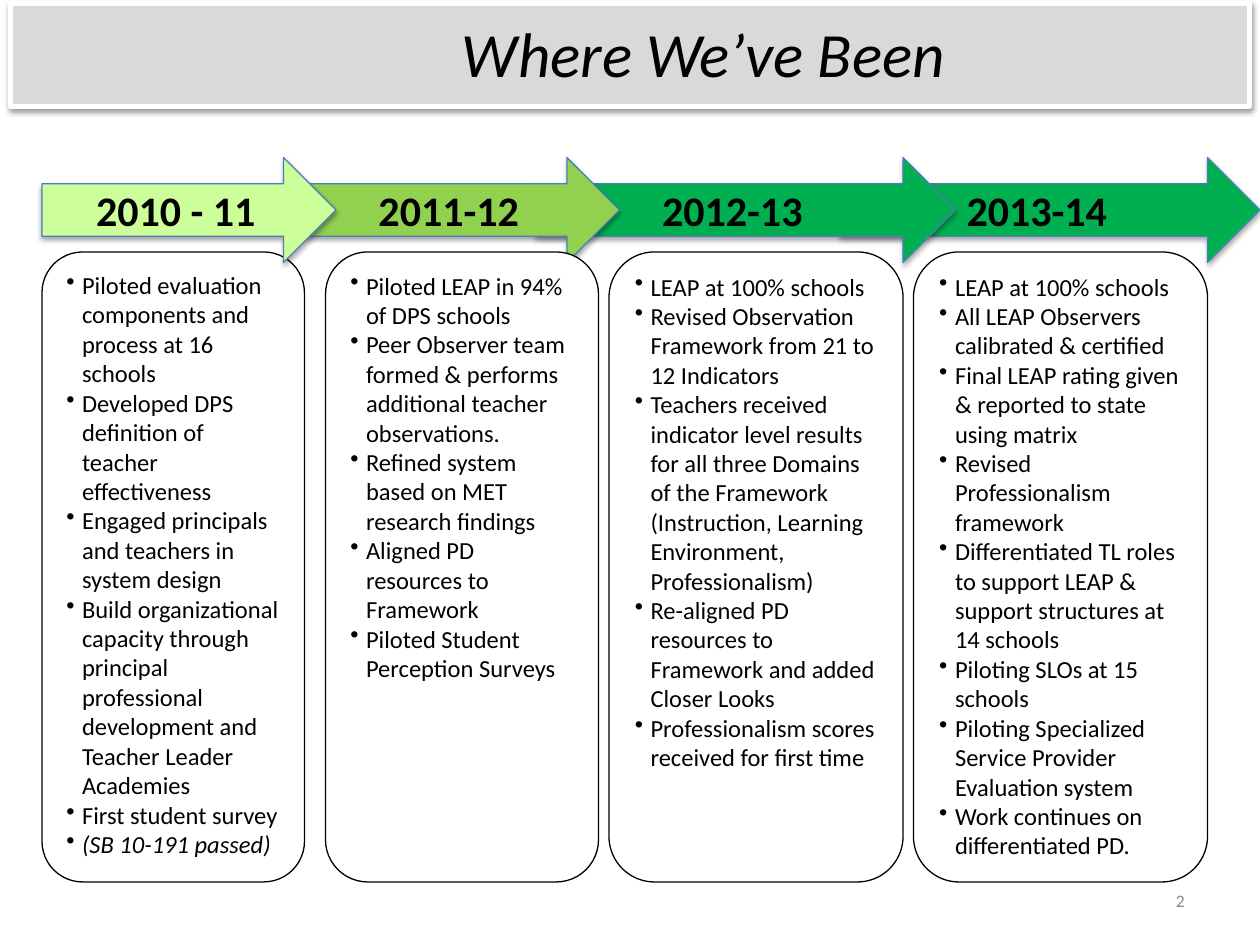
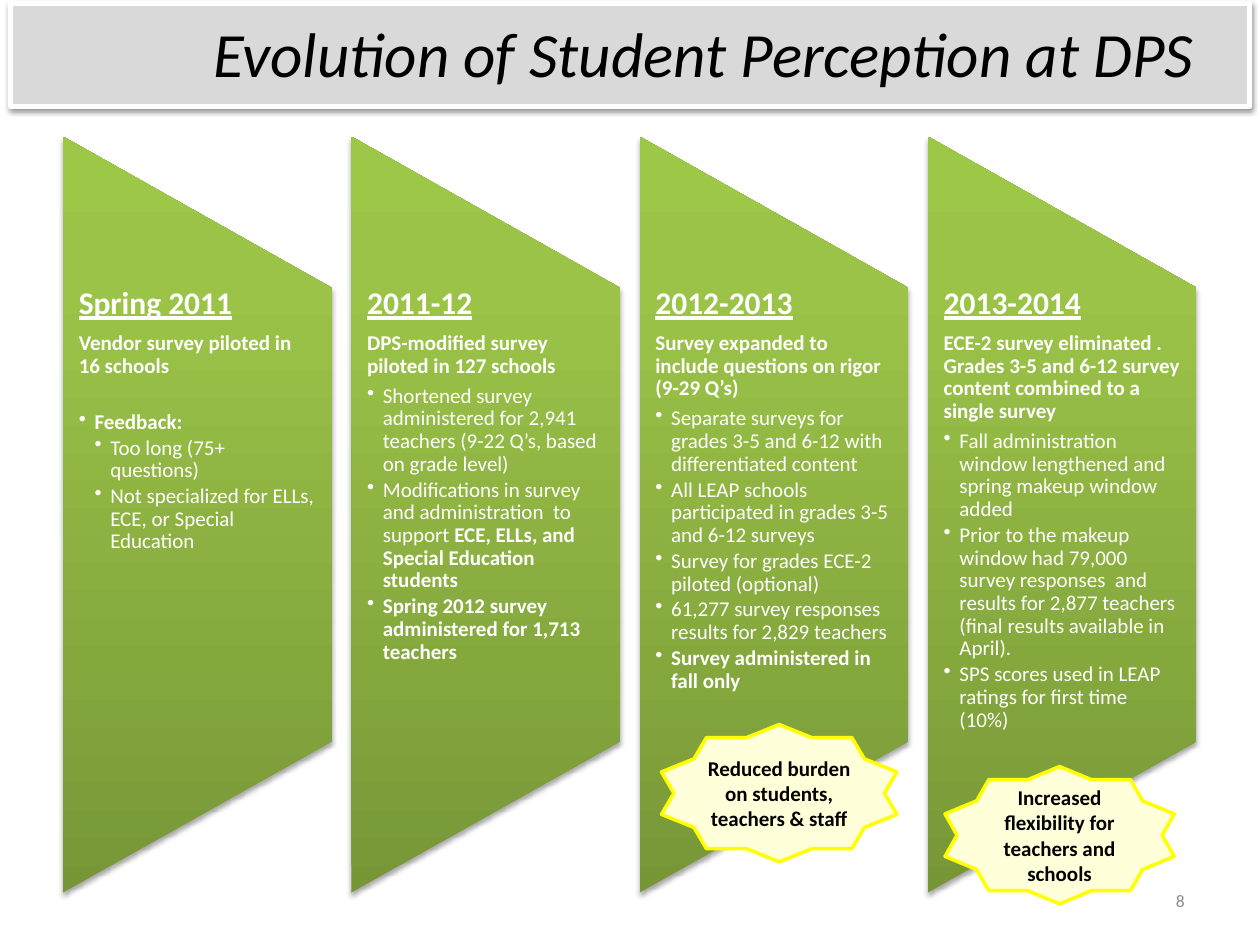
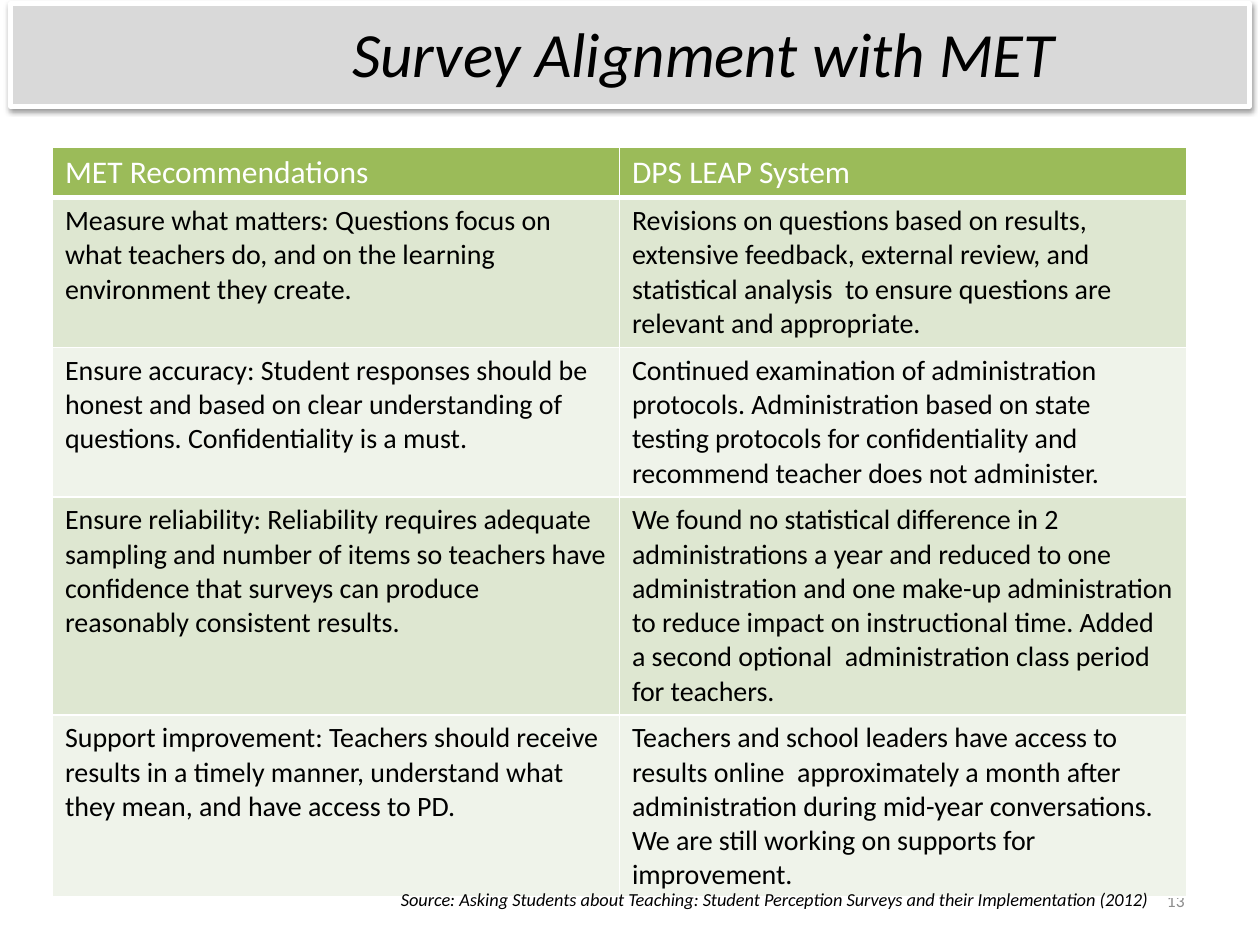
from dataclasses import dataclass

import lxml.etree
import pptx
import pptx.dml.color
import pptx.enum.shapes
import pptx.enum.text
import pptx.oxml.ns
import pptx.util

Pt = pptx.util.Pt
qn = pptx.oxml.ns.qn
SHAPE = pptx.enum.shapes.MSO_SHAPE
ALIGN = pptx.enum.text.PP_ALIGN
ANCHOR = pptx.enum.text.MSO_ANCHOR

FONT = "Calibri"
COLORS = {
    "black": "000000", "white": "FFFFFF", "band": "D9D9D9", "number": "8C8C8C",
    "arrow line": "4B7EBC", "pale green": "CCFF99", "light green": "92D050",
    "green": "00B050", "column dark": "779737", "column mid": "9BC348",
    "column light": "9DC746", "star": "FFFFD9", "star line": "FFFF00",
    "header": "9BBB59", "odd row": "DEE7D1", "even row": "EFF3EA",
}
INDENT = 9


@dataclass(frozen=True)
class Box:
    left: float
    top: float
    width: float
    height: float

    def lengths(self) -> tuple:
        return Pt(self.left), Pt(self.top), Pt(self.width), Pt(self.height)


@dataclass(frozen=True)
class Style:
    size: float
    color: str = "black"
    bold: bool = False
    italic: bool = False
    underline: bool = False


@dataclass(frozen=True)
class Year:
    """A timeline step: an arrow above a box of bullets."""
    label: str
    color: str
    arrow_left: float
    arrow_width: float
    box_left: float
    box_width: float
    bullets: tuple


@dataclass(frozen=True)
class Bullet:
    text: str
    bold: bool = False
    level: int = 1
    bold_ending: str = ""


@dataclass(frozen=True)
class SurveyColumn:
    heading: str
    summary: str
    bullets: tuple
    summary_gap: float = 4.2


@dataclass(frozen=True)
class Star:
    text: str
    box: Box


BAND = Box(6, 2.25, 708, 58.5)
TITLE = Box(84, 0, 636, 60)
NUMBER = Box(516, 500, 168, 29)

YEARS = (
    Year("2010 - 11", "pale green", 24, 168, 24, 150, (
        "Piloted evaluation components and process at 16 schools",
        "Developed DPS definition of teacher effectiveness",
        "Engaged principals and teachers in system design",
        "Build organizational capacity through principal professional "
        "development and Teacher Leader Academies",
        "First student survey",
        "(SB 10-191 passed)")),
    Year("2011-12", "light green", 174, 180, 186, 156, (
        "Piloted LEAP in 94% of DPS schools",
        "Peer Observer team formed & performs additional teacher observations.",
        "Refined system based on MET research findings",
        "Aligned PD resources to Framework",
        "Piloted Student Perception Surveys")),
    Year("2012-13", "green", 306, 240, 348, 168, (
        "LEAP at 100% schools",
        "Revised Observation Framework from 21 to 12 Indicators",
        "Teachers received indicator level results for all three Domains of the "
        "Framework (Instruction, Learning Environment, Professionalism)",
        "Re-aligned PD resources to Framework and added Closer Looks",
        "Professionalism scores received for first time")),
    Year("2013-14", "green", 480, 240, 522, 168, (
        "LEAP at 100% schools",
        "All LEAP Observers calibrated & certified",
        "Final LEAP rating given & reported to state using matrix",
        "Revised Professionalism framework",
        "Differentiated TL roles to support LEAP & support structures at 14 schools",
        "Piloting SLOs at 15 schools",
        "Piloting Specialized Service Provider Evaluation system",
        "Work continues on differentiated PD.")),
)

SURVEY_COLUMNS = (
    SurveyColumn("Spring 2011", "Vendor survey piloted in 16 schools", (
        Bullet("Feedback:", bold=True),
        Bullet("Too long (75+ questions)", level=2),
        Bullet("Not specialized for ELLs, ECE, or Special Education", level=2)),
        summary_gap=19),
    SurveyColumn("2011-12", "DPS-modified survey piloted in 127 schools", (
        Bullet("Shortened survey administered for 2,941 teachers "
               "(9-22 Q’s, based on grade level)"),
        Bullet("Modifications in survey and administration  to support ",
               bold_ending="ECE, ELLs, and Special Education students"),
        Bullet("Spring 2012 survey administered for 1,713 teachers", bold=True))),
    SurveyColumn("2012-2013", "Survey expanded to include questions on rigor (9-29 Q’s)", (
        Bullet("Separate surveys for grades 3-5 and 6-12 with differentiated content"),
        Bullet("All LEAP schools participated in grades 3-5 and 6-12 surveys"),
        Bullet("Survey for grades ECE-2 piloted (optional)"),
        Bullet("61,277 survey responses results for 2,829 teachers"),
        Bullet("Survey administered in fall only", bold=True))),
    SurveyColumn("2013-2014", "ECE-2 survey eliminated . Grades 3-5 and 6-12 survey "
                 "content combined to a single survey", (
        Bullet("Fall administration window lengthened and spring makeup window added"),
        Bullet("Prior to the makeup window had 79,000 survey responses  and results "
               "for 2,877 teachers (final results available in April)."),
        Bullet("SPS scores used in LEAP ratings for first time (10%)"))),
)

STARS = (
    Star("Reduced burden on students, teachers & staff", Box(378, 414, 134.5, 78.5)),
    Star("Increased flexibility for teachers and schools", Box(540, 438, 131, 78.5)),
)

ALIGNMENT_ROWS = (
    ("MET Recommendations", "DPS LEAP System"),
    ("Measure what matters: Questions focus on what teachers do, and on the "
     "learning environment they create.",
     "Revisions on questions based on results, extensive feedback, external review, "
     "and statistical analysis  to ensure questions are relevant and appropriate."),
    ("Ensure accuracy: Student responses should be honest and based on clear "
     "understanding of questions. Confidentiality is a must.",
     "Continued examination of administration protocols. Administration based on "
     "state testing protocols for confidentiality and recommend teacher does not "
     "administer."),
    ("Ensure reliability: Reliability requires adequate sampling and number of items "
     "so teachers have confidence that surveys can produce reasonably consistent "
     "results.",
     "We found no statistical difference in 2 administrations a year and reduced to "
     "one administration and one make-up administration to reduce impact on "
     "instructional time. Added a second optional  administration class period for "
     "teachers."),
    ("Support improvement: Teachers should receive results in a timely manner, "
     "understand what they mean, and have access to PD.",
     "Teachers and school leaders have access to results online  approximately a "
     "month after administration during mid-year conversations. We are still working "
     "on supports for improvement."),
)
ROW_HEIGHTS = (29, 85.5, 85.5, 124.5, 104)


def rgb(name: str) -> pptx.dml.color.RGBColor:
    return pptx.dml.color.RGBColor.from_string(COLORS[name])


def format_runs(paragraph, style: Style) -> None:
    for run in paragraph.runs:
        font = run.font
        font.name = FONT
        font.size = Pt(style.size)
        font.color.rgb = rgb(style.color)
        font.bold = style.bold
        font.italic = style.italic
        font.underline = style.underline


def add_bullet(paragraph, level: int = 1) -> None:
    properties = paragraph._p.get_or_add_pPr()
    properties.set("marL", str(Pt(INDENT * level)))
    properties.set("indent", str(-Pt(INDENT)))
    lxml.etree.SubElement(properties, qn("a:buChar"), char="•")


def write_text(shape, text: str, style: Style, align=ALIGN.LEFT, anchor=ANCHOR.MIDDLE) -> None:
    """Fill a shape with one paragraph per line of text, all in one style."""
    frame = shape.text_frame
    frame.word_wrap = True
    frame.vertical_anchor = anchor
    frame.text = text
    for paragraph in frame.paragraphs:
        paragraph.alignment = align
        format_runs(paragraph, style)


def add_text(slide, box: Box, text: str, style: Style, align=ALIGN.LEFT,
             anchor=ANCHOR.MIDDLE) -> None:
    write_text(slide.shapes.add_textbox(*box.lengths()), text, style, align, anchor)


def add_shape(slide, kind, box: Box, fill: str = "", line: str = "", line_width: float = 0.75):
    """Add a preset shape without shadow; an empty colour name leaves that part off."""
    shape = slide.shapes.add_shape(kind, *box.lengths())
    shape.shadow.inherit = False
    if fill:
        shape.fill.solid()
        shape.fill.fore_color.rgb = rgb(fill)
    if line:
        shape.line.color.rgb = rgb(line)
        shape.line.width = Pt(line_width)
    else:
        shape.line.fill.background()
    return shape


def add_color_element(parent, name: str):
    return lxml.etree.SubElement(parent, qn("a:srgbClr"), val=COLORS[name])


def add_shadow(shape, opacity: int, distance: float) -> None:
    effects = shape._element.spPr.find(qn("a:effectLst"))
    shadow = lxml.etree.SubElement(
        effects, qn("a:outerShdw"), blurRad=str(Pt(3.1)), dist=str(Pt(distance)),
        dir="5400000", rotWithShape="0")
    color = add_color_element(shadow, "black")
    lxml.etree.SubElement(color, qn("a:alpha"), val=str(opacity * 1000))


def fill_column_gradient(shape) -> None:
    """Dark at the bottom, light at the top, whatever the shape's rotation."""
    shape.fill.gradient()
    shape.fill.gradient_angle = 90
    gradient = shape._element.spPr.find(qn("a:gradFill"))
    gradient.set("rotWithShape", "0")
    stops = gradient.find(qn("a:gsLst"))
    for stop in list(stops):
        stops.remove(stop)
    for position, name in ((0, "column dark"), (80, "column mid"), (100, "column light")):
        stop = lxml.etree.SubElement(stops, qn("a:gs"), pos=str(position * 1000))
        add_color_element(stop, name)


def add_base_slide(presentation, title: str, number: int):
    slide = presentation.slides.add_slide(presentation.slide_layouts[6])
    band = add_shape(slide, SHAPE.RECTANGLE, BAND, "band", "white", 3)
    add_shadow(band, 38, 1.6)
    add_text(slide, TITLE, title, Style(36, italic=True), ALIGN.CENTER)
    add_text(slide, NUMBER, str(number), Style(10, "number"), ALIGN.RIGHT)
    return slide


def add_year_arrow(slide, year: Year) -> None:
    box = Box(year.arrow_left, 90, year.arrow_width, 60)
    arrow = add_shape(slide, SHAPE.RIGHT_ARROW, box, year.color, "arrow line")
    add_shadow(arrow, 35, 1.8)
    write_text(arrow, year.label, Style(24, bold=True), ALIGN.CENTER)


def add_year_box(slide, year: Year) -> None:
    box = Box(year.box_left, 144, year.box_width, 360)
    shape = add_shape(slide, SHAPE.ROUNDED_RECTANGLE, box, "white", "black")
    shape.adjustments[0] = 0.155
    write_text(shape, "\n".join(year.bullets), Style(14), anchor=ANCHOR.TOP)
    for paragraph in shape.text_frame.paragraphs:
        add_bullet(paragraph)
        if paragraph.text.startswith("("):
            format_runs(paragraph, Style(14, italic=True))


def add_survey_column(slide, column: SurveyColumn, left: float) -> None:
    width, height, top = 153.5, 432, 78
    box = Box(left + (width - height) / 2, top + (height - width) / 2, height, width)
    shape = add_shape(slide, SHAPE.FLOWCHART_MANUAL_OPERATION, box)
    shape.rotation = 270
    fill_column_gradient(shape)
    add_shadow(shape, 35, 1.8)

    text_box = slide.shapes.add_textbox(*Box(left, 164.25, width, 259).lengths())
    lines = [column.heading, column.summary] + [bullet.text for bullet in column.bullets]
    write_text(text_box, "\n".join(lines), Style(12, "white", bold=True), anchor=ANCHOR.TOP)
    frame = text_box.text_frame
    frame.margin_left = frame.margin_right = Pt(9)
    frame.margin_top = frame.margin_bottom = Pt(0)
    heading, summary, *details = frame.paragraphs
    for paragraph in frame.paragraphs:
        paragraph.line_spacing = 0.9
        paragraph.space_after = Pt(1.8)
    format_runs(heading, Style(18, "white", bold=True, underline=True))
    heading.space_after = Pt(6.3)
    summary.space_after = Pt(column.summary_gap)
    for paragraph, bullet in zip(details, column.bullets):
        add_bullet(paragraph, bullet.level)
        format_runs(paragraph, Style(12, "white", bold=bullet.bold))
        if bullet.bold_ending:
            ending = paragraph.add_run()
            ending.text = bullet.bold_ending
            format_runs(paragraph, Style(12, "white"))
            ending.font.bold = True


def add_cell_borders(cell, bottom_width: float) -> None:
    properties = cell._tc.get_or_add_tcPr()
    for side, width in (("L", 1), ("R", 1), ("T", 1), ("B", bottom_width)):
        line = lxml.etree.SubElement(properties, qn(f"a:ln{side}"), w=str(Pt(width)))
        add_color_element(lxml.etree.SubElement(line, qn("a:solidFill")), "white")


def add_alignment_table(slide) -> None:
    box = Box(30, 84, 648, sum(ROW_HEIGHTS))
    table = slide.shapes.add_table(len(ALIGNMENT_ROWS), 2, *box.lengths()).table
    for row_index, texts in enumerate(ALIGNMENT_ROWS):
        is_header = row_index == 0
        table.rows[row_index].height = Pt(ROW_HEIGHTS[row_index])
        fill = "header" if is_header else "odd row" if row_index % 2 else "even row"
        style = Style(18, "white") if is_header else Style(16)
        for column_index, text in enumerate(texts):
            cell = table.cell(row_index, column_index)
            add_cell_borders(cell, 3 if is_header else 1)
            cell.fill.solid()
            cell.fill.fore_color.rgb = rgb(fill)
            cell.text_frame.text = text
            format_runs(cell.text_frame.paragraphs[0], style)


def build_timeline_slide(presentation) -> None:
    slide = add_base_slide(presentation, "Where We’ve Been", 2)
    first, *later = YEARS
    for year in reversed(later):
        add_year_arrow(slide, year)
    add_year_box(slide, first)
    add_year_arrow(slide, first)
    for year in later:
        add_year_box(slide, year)


def build_evolution_slide(presentation) -> None:
    slide = add_base_slide(presentation, "Evolution of Student Perception at DPS", 8)
    for index, column in enumerate(SURVEY_COLUMNS):
        add_survey_column(slide, column, 36 + 164.75 * index)
    for star in STARS:
        shape = add_shape(slide, SHAPE.STAR_10_POINT, star.box, "star", "star line", 2)
        write_text(shape, star.text, Style(12, bold=True), ALIGN.CENTER)


def build_alignment_slide(presentation) -> None:
    slide = add_base_slide(presentation, "Survey Alignment with MET", 13)
    add_alignment_table(slide)
    add_text(slide, Box(222, 504, 474, 21),
             "Source: Asking Students about Teaching: Student Perception Surveys "
             "and their Implementation (2012)",
             Style(10.5, italic=True), anchor=ANCHOR.TOP)


def main() -> None:
    presentation = pptx.Presentation()
    presentation.slide_width = Pt(720)
    presentation.slide_height = Pt(540)
    build_timeline_slide(presentation)
    build_evolution_slide(presentation)
    build_alignment_slide(presentation)
    presentation.save("out.pptx")


if __name__ == "__main__":
    main()
